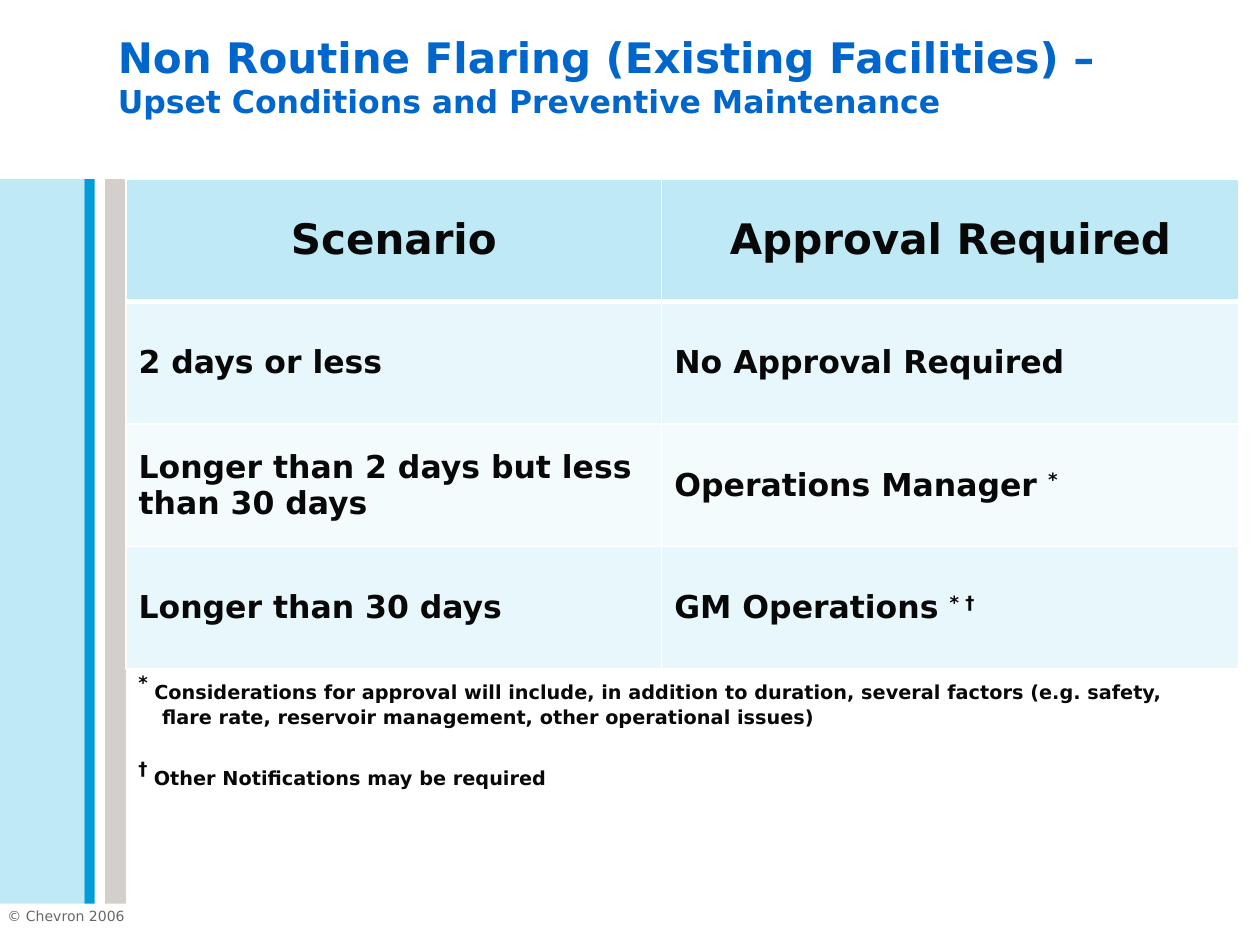
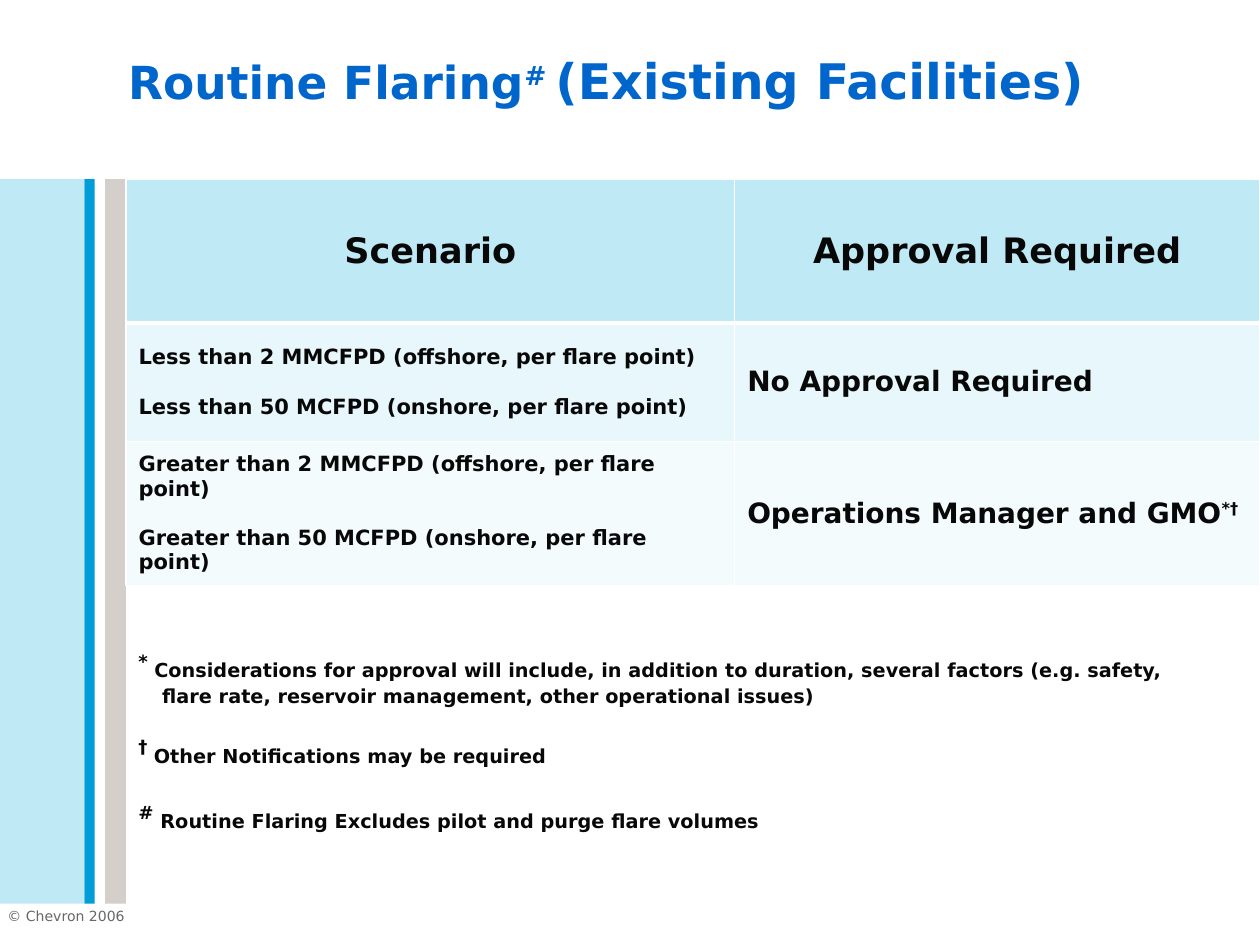
from dataclasses import dataclass

from lxml import etree
from pptx import Presentation
from pptx.dml.color import RGBColor
from pptx.enum.shapes import MSO_SHAPE
from pptx.enum.text import MSO_ANCHOR, MSO_AUTO_SIZE, PP_ALIGN
from pptx.oxml.ns import qn
from pptx.util import Cm, Pt

RECT = MSO_SHAPE.RECTANGLE
LEFT, CENTER = PP_ALIGN.LEFT, PP_ALIGN.CENTER
BOTTOM, MIDDLE = MSO_ANCHOR.BOTTOM, MSO_ANCHOR.MIDDLE
NO_FIT = MSO_AUTO_SIZE.NONE


@dataclass(frozen=True)
class Theme:
    font: str = "DejaVu Sans"
    title: str = "0066CC"
    ink: str = "080808"
    foot: str = "666767"
    line: str = "FFFFFF"
    sky: str = "BFE9F5"
    blue: str = "009DD9"
    stone: str = "D4CFCA"
    rows: tuple = ("E8F7FB", "F4FBFD")
    note_size: int = 11
    mark_size: int = 18
    foot_size: int = 8


@dataclass(frozen=True)
class Bit:
    """A run of text; size None follows the paragraph."""
    text: str
    size: int = None
    up: bool = False


THEME = Theme()
TOP = 3.61
EDGE = 2.54
BREAK = "\n"


def paint(shape, color):
    shape.fill.solid()
    shape.fill.fore_color.rgb = RGBColor.from_string(color)


def write(para, bits, size, color=THEME.ink, bold=True, align=LEFT):
    """Fill a paragraph with plain strings and Bits."""
    para.alignment = align
    font = para.font
    font.name, font.size, font.bold = THEME.font, Pt(size), bold
    font.color.rgb = RGBColor.from_string(color)
    for bit in bits:
        if bit == BREAK:
            para.add_line_break()
            continue
        bit = Bit(bit) if isinstance(bit, str) else bit
        run = para.add_run()
        run.text = bit.text
        if bit.size:
            run.font.size = Pt(bit.size)
        if bit.up:
            run.font._element.set("baseline", "30000")


# Side bands and copyright line, shared through the master
def add_frame(slide, master):
    tree = master.element.find(qn("p:cSld")).find(qn("p:spTree"))
    bands = ((2.12, 0.42, THEME.stone), (1.7, 0.21, THEME.blue),
             (0, 1.7, THEME.sky))
    for left, width, color in bands:
        band = slide.shapes.add_shape(RECT, Cm(left), Cm(TOP), Cm(width), Cm(14.61))
        band.shadow.inherit = False
        band.line.fill.background()
        paint(band, color)
        tree.append(band.element)

    foot = slide.shapes.add_textbox(Cm(0.15), Cm(18.29), Cm(2.62), Cm(0.33))
    frame = foot.text_frame
    frame.margin_left = frame.margin_right = 0
    frame.margin_top = frame.margin_bottom = 0
    write(frame.paragraphs[0], ["© Chevron 2006"], THEME.foot_size, THEME.foot, False)
    tree.append(foot.element)


def set_title(slide, box, bits, size):
    title = slide.shapes.title
    title.left, title.top, title.width, title.height = map(Cm, box)
    frame = title.text_frame
    frame.auto_size = NO_FIT
    frame.word_wrap = True
    frame.vertical_anchor = BOTTOM
    write(frame.paragraphs[0], bits, size, THEME.title)


def set_edges(cell, base):
    """White cell borders; base is the width of the lower one."""
    props = cell._tc.get_or_add_tcPr()
    for side, width in (("L", 1), ("R", 1), ("T", 1), ("B", base)):
        line = etree.SubElement(props, qn(f"a:ln{side}"), w=str(Pt(width)))
        fill = etree.SubElement(line, qn("a:solidFill"))
        etree.SubElement(fill, qn("a:srgbClr"), val=THEME.line)


# Approval table: a cell is a list of paragraphs, each a list of bits
def add_grid(slide, left, top, cols, heights, head_size, sizes, rows):
    shape = slide.shapes.add_table(len(heights), len(cols), Cm(left), Cm(top),
                                   Cm(sum(cols)), Cm(sum(heights)))
    grid = shape.table
    for col, width in zip(grid.columns, cols):
        col.width = Cm(width)
    for row, height in zip(grid.rows, heights):
        row.height = Cm(height)

    head = [[["Scenario"]], [["Approval Required"]]]
    for r, row in enumerate([head, *rows]):
        for c, paras in enumerate(row):
            cell = grid.cell(r, c)
            cell.vertical_anchor = MIDDLE
            set_edges(cell, 1 if r else 3)
            paint(cell, THEME.rows[(r - 1) % 2] if r else THEME.sky)
            frame = cell.text_frame
            for i, bits in enumerate(paras):
                para = frame.add_paragraph() if i else frame.paragraphs[0]
                if i:
                    para.space_before = Pt(14)
                write(para, bits, sizes[c] if r else head_size,
                      align=LEFT if r else CENTER)


# Footnotes: offset from the top, size, mark, wording, hanging indent
NOTES = (
    (0, 21.79, 1.5, "* ", "Considerations for approval will include, in addition "
     "to duration, several factors (e.g. safety, flare rate, reservoir management, "
     "other operational issues)", 0.48),
    (1.73, 9.07, 1.02, "† ", "Other Notifications may be required", 0),
    (3.05, 19.25, 0.76, "#", " Routine Flaring Excludes pilot and purge flare volumes", 0),
)


def add_notes(slide, left, top, count):
    for drop, width, height, mark, text, hang in NOTES[:count]:
        box = slide.shapes.add_textbox(Cm(left), Cm(top + drop), Cm(width), Cm(height))
        frame = box.text_frame
        frame.word_wrap = True
        para = frame.paragraphs[0]
        if hang:
            props = para._p.get_or_add_pPr()
            props.set("marL", str(Cm(hang)))
            props.set("indent", str(-Cm(hang)))
        write(para, [Bit(mark, THEME.mark_size, True), text], THEME.note_size)


def fill_upset(slide):
    set_title(slide, (2.12, 0.64, 22.23, 1.9),
              ["Non Routine Flaring (Existing Facilities) –", BREAK,
               Bit("Upset Conditions and Preventive Maintenance", 18)], 24)
    rows = [
        [[["2 days or less"]], [["No Approval Required"]]],
        [[["Longer than 2 days but less than 30 days"]],
         [["Operations Manager ", Bit("*", up=True)]]],
        [[["Longer than 30 days"]], [["GM Operations ", Bit("* †", up=True)]]],
    ]
    add_grid(slide, EDGE, TOP, (10.8, 11.64), [2.47] * 4, 24, (18, 18), rows)
    add_notes(slide, EDGE, 13.34, 2)


def fill_routine(slide):
    set_title(slide, (2.33, 0.85, 20.53, 1.48),
              ["Routine Flaring", Bit("# ", up=True),
               Bit("(Existing Facilities)", 28)], 26)
    rows = [
        [[[f"{word} than {rate} per flare point)"]
          for rate in ("2 MMCFPD (offshore,", "50 MCFPD (onshore,")], [answer]]
        for word, answer in (
            ("Less", ["No Approval Required"]),
            ("Greater", ["Operations Manager and GMO", Bit("*†", up=True)]))
    ]
    add_grid(slide, EDGE, TOP, (12.27, 10.59), (2.9, 2.39, 2.9), 20, (12, 16), rows)
    add_notes(slide, EDGE, 12.9, 3)


def main():
    deck = Presentation()
    deck.slide_width, deck.slide_height = Cm(25.4), Cm(19.05)
    layout = deck.slide_layouts.get_by_name("Title Only")
    first, second = (deck.slides.add_slide(layout) for _ in range(2))
    add_frame(first, deck.slide_master)
    fill_upset(first)
    fill_routine(second)
    deck.save("out.pptx")


if __name__ == "__main__":
    main()
